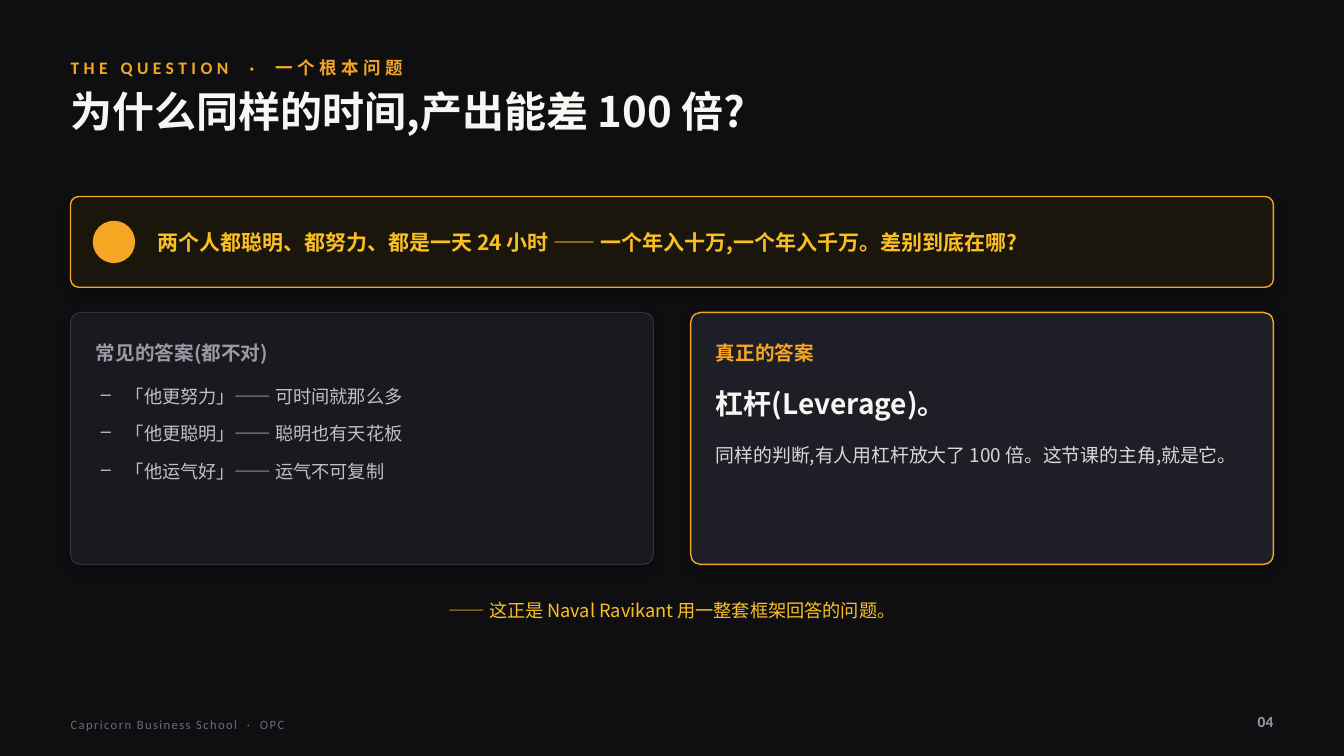
import pptx
import pptx.dml.color
import pptx.enum.shapes
import pptx.enum.text
import pptx.oxml
import pptx.oxml.ns
import pptx.util
from lxml import etree

Inches = pptx.util.Inches
Pt = pptx.util.Pt
SHAPE = pptx.enum.shapes.MSO_SHAPE
ANCHOR = pptx.enum.text.MSO_ANCHOR
ALIGN = pptx.enum.text.PP_ALIGN
qn = pptx.oxml.ns.qn

SANS = "Noto Sans CJK SC"
LATIN = "Calibri"
AMBER, GOLD, WHITE, GREY = "F5A623", "FBBF24", "F6F6F3", "9A9AA6"
LEFT, WIDTH = 0.7, 11.93
CARD_TOP, CARD_WIDTH, RIGHT_CARD = 3.1, 5.78, 6.85

SHADOW = (
    f'<a:effectLst {pptx.oxml.ns.nsdecls("a")}>'
    '<a:outerShdw blurRad="114300" dist="38100" dir="5400000" rotWithShape="0">'
    '<a:srgbClr val="000000"><a:alpha val="34000"/></a:srgbClr>'
    '</a:outerShdw></a:effectLst>'
)


def color(hex_value):
    return pptx.dml.color.RGBColor.from_string(hex_value)


def write(box, lines, size, hex_value, font=SANS, bold=False, anchor=ANCHOR.MIDDLE,
          tracking=0, bullet=None, **paragraph_format):
    """Fill a text box or placeholder with one paragraph per line, without insets."""
    frame = box.text_frame
    frame_format = dict(word_wrap=True, auto_size=pptx.enum.text.MSO_AUTO_SIZE.NONE,
                        vertical_anchor=anchor, margin_left=0, margin_top=0,
                        margin_right=0, margin_bottom=0)
    for name, value in frame_format.items():
        setattr(frame, name, value)
    for index, line in enumerate(lines):
        para = frame.add_paragraph() if index else frame.paragraphs[0]
        for name, value in paragraph_format.items():
            setattr(para, name, value)
        if bullet:
            properties = para._p.get_or_add_pPr()
            properties.set("marL", str(Inches(0.25)))
            properties.set("indent", str(-Inches(0.25)))
            etree.SubElement(properties, qn("a:buChar")).set("char", bullet)
        span = para.add_run()
        span.text = line
        for name, value in dict(size=Pt(size), bold=bold, name=font).items():
            setattr(span.font, name, value)
        span.font.color.rgb = color(hex_value)
        run_properties = span._r.get_or_add_rPr()
        if tracking:
            run_properties.set("spc", str(round(tracking * 100)))
        etree.SubElement(run_properties, qn("a:ea")).set("typeface", SANS)


deck = pptx.Presentation()
deck.slide_width, deck.slide_height = Inches(13.33), Inches(7.5)
page = deck.slides.add_slide(deck.slide_layouts[5])
page.background.fill.solid()
page.background.fill.fore_color.rgb = color("0F0F12")

# Title
title = page.shapes.title
title.left, title.top = Inches(LEFT), Inches(0.85)
title.width, title.height = Inches(WIDTH), Inches(0.9)
write(title, ["为什么同样的时间,产出能差 100 倍?"], 30, WHITE, bold=True,
      anchor=ANCHOR.TOP, alignment=ALIGN.LEFT)

# Question banner and the two answer cards
panels = [
    (LEFT, 1.95, WIDTH, 0.9, 0.089, "1A160C", AMBER, 1),
    (LEFT, CARD_TOP, CARD_WIDTH, 2.5, 0.04, "191920", "33333E", 0.75),
    (RIGHT_CARD, CARD_TOP, CARD_WIDTH, 2.5, 0.04, "1E1E26", AMBER, 1),
]
for left, top, width, height, rounding, fill, line, weight in panels:
    panel = page.shapes.add_shape(SHAPE.ROUNDED_RECTANGLE, Inches(left), Inches(top),
                                  Inches(width), Inches(height))
    panel.adjustments[0] = rounding
    panel.fill.solid()
    panel.fill.fore_color.rgb = color(fill)
    panel.line.color.rgb = color(line)
    panel.line.width = Pt(weight)
    panel._element.spPr.append(pptx.oxml.parse_xml(SHADOW))

dot = page.shapes.add_shape(SHAPE.OVAL, Inches(0.92), Inches(2.19), Inches(0.42), Inches(0.42))
dot.shadow.inherit = False
dot.fill.solid()
dot.fill.fore_color.rgb = color(AMBER)
dot.line.fill.background()

# Texts: left, top, width, height, lines, size, colour, format
card_text = RIGHT_CARD + 0.25
texts = [
    (LEFT, 0.52, WIDTH, 0.3, ["THE QUESTION  ·  一个根本问题"], 12.5, AMBER,
     dict(font=LATIN, bold=True, tracking=3.2)),
    (1.56, 1.95, 10.83, 0.9,
     ["两个人都聪明、都努力、都是一天 24 小时 —— 一个年入十万,一个年入千万。差别到底在哪?"],
     15, GOLD, dict(bold=True, line_spacing=1.05)),
    (LEFT + 0.25, 3.3, 5, 0.4, ["常见的答案(都不对)"], 14, GREY, dict(bold=True)),
    (1, 3.8, 5.2, 1.7,
     ["「他更努力」—— 可时间就那么多",
      "「他更聪明」—— 聪明也有天花板",
      "「他运气好」—— 运气不可复制"],
     13, "BFBFC8",
     dict(anchor=ANCHOR.TOP, bullet="–", line_spacing=1.12, space_after=Pt(9))),
    (card_text, 3.3, 5, 0.4, ["真正的答案"], 14, AMBER, dict(bold=True)),
    (card_text, 3.75, 5.2, 0.5, ["杠杆(Leverage)。"], 20, WHITE, dict(bold=True)),
    (card_text, 4.35, 5.3, 1.1,
     ["同样的判断,有人用杠杆放大了 100 倍。这节课的主角,就是它。"], 13.5, "D7D7DE",
     dict(anchor=ANCHOR.TOP, line_spacing=1.25)),
    (LEFT, 5.85, WIDTH, 0.4, ["—— 这正是 Naval Ravikant 用一整套框架回答的问题。"], 13, GOLD,
     dict(alignment=ALIGN.CENTER)),
    (LEFT, 7.04, 7, 0.3, ["Capricorn Business School  ·  OPC"], 9, "6B6B76",
     dict(font=LATIN, tracking=1)),
    (11.83, 7, 0.8, 0.32, ["04"], 11, GREY,
     dict(font=LATIN, bold=True, alignment=ALIGN.RIGHT)),
]
for left, top, width, height, lines, size, hex_value, text_format in texts:
    box = page.shapes.add_textbox(Inches(left), Inches(top), Inches(width), Inches(height))
    write(box, lines, size, hex_value, **text_format)

deck.save("out.pptx")
